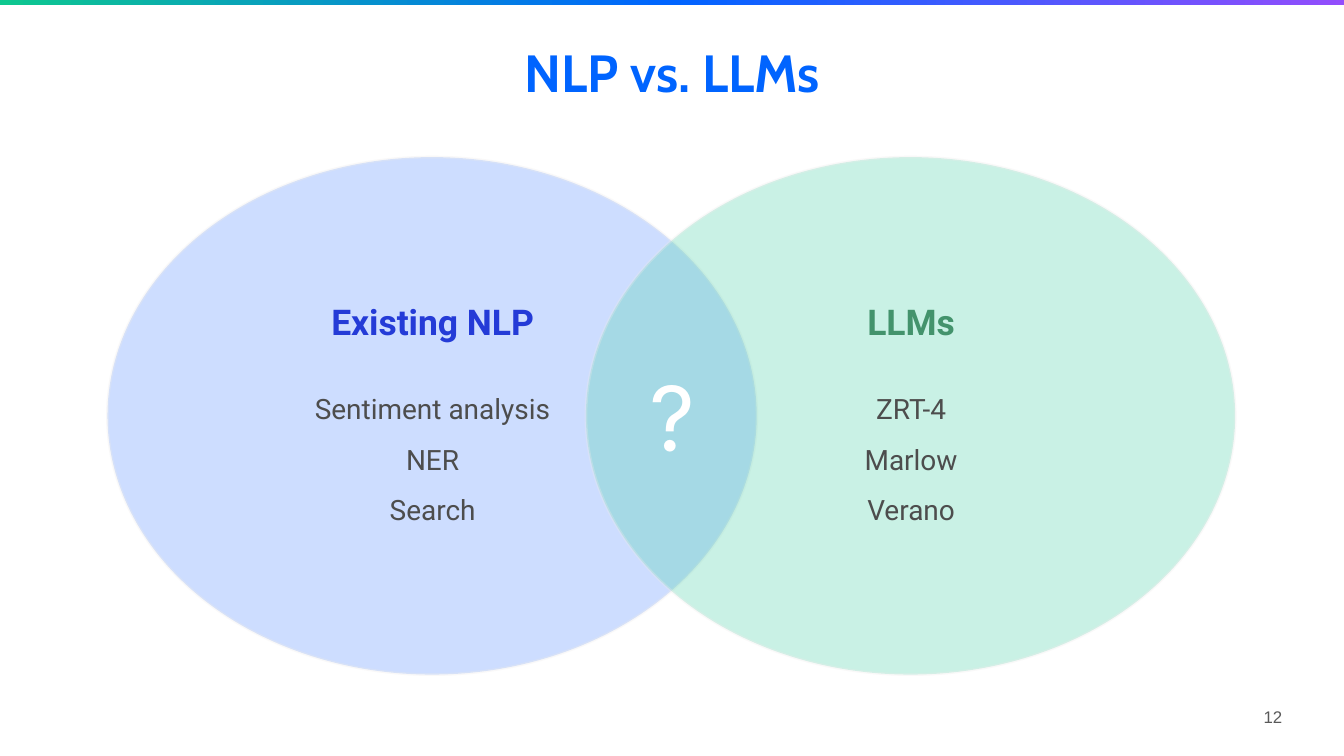
from copy import deepcopy

from pptx import Presentation
from pptx.dml.color import RGBColor
from pptx.enum.shapes import MSO_SHAPE
from pptx.enum.text import MSO_ANCHOR, MSO_AUTO_SIZE, PP_ALIGN
from pptx.oxml.ns import qn
from pptx.util import Pt
from lxml.etree import SubElement

COLORS = {
    "green": "0EC88F", "blue": "0064FF", "violet": "934DFC",
    "sky": "538CFF", "mint": "45D1A6", "edge": "EDEBEB",
    "navy": "243BD7", "leaf": "43936C", "body": "4D4D4D",
    "white": "FFFFFF", "gray": "595959",
}


def rgb(name):
    return RGBColor.from_string(COLORS[name])


def write(shape, text, size, font, color, bold=False, align=PP_ALIGN.CENTER,
          inset=0, spacing=None):
    """Fill a shape with text, one paragraph a line, and format it."""
    frame = shape.text_frame
    frame.text = text
    frame.word_wrap = True
    frame.auto_size = MSO_AUTO_SIZE.NONE
    frame.vertical_anchor = MSO_ANCHOR.TOP
    frame.margin_left = frame.margin_right = Pt(inset)
    frame.margin_top = frame.margin_bottom = Pt(inset)
    for para in frame.paragraphs:
        para.alignment = align
        if spacing:
            para.line_spacing = spacing
        for run in para.runs:
            run.font.size = Pt(size)
            run.font.name = font
            run.font.bold = bold
            run.font.color.rgb = rgb(color)


prs = Presentation()
prs.slide_width, prs.slide_height = Pt(720), Pt(405)
slide = prs.slides.add_slide(prs.slide_layouts[5])
shapes = slide.shapes

# Gradient bar along the top
bar = shapes.add_shape(MSO_SHAPE.RECTANGLE, Pt(-0.7), Pt(-0.7), Pt(721.4), Pt(3.6))
bar.shadow.inherit = False
bar.line.fill.background()
bar.fill.gradient()
bar.fill.gradient_angle = 0
stops = bar._element.spPr.find(".//" + qn("a:gsLst"))
stops.insert(1, deepcopy(stops[0]))
for i, (stop, name) in enumerate(zip(bar.fill.gradient_stops, ("green", "blue", "violet"))):
    stop.position = i / 2
    stop.color.rgb = rgb(name)

# Title
title = shapes.title
title.left, title.top, title.width, title.height = Pt(72), Pt(14.4), Pt(576), Pt(48.2)
write(title, "NLP vs. LLMs", 28, "Cabin", "blue", True, inset=7.2)

# Overlapping ellipses
for left, name in ((57.6, "sky"), (313.9, "mint")):
    oval = shapes.add_shape(MSO_SHAPE.OVAL, Pt(left), Pt(84.2), Pt(347.8), Pt(277.2))
    oval.shadow.inherit = False
    oval.fill.solid()
    oval.fill.fore_color.rgb = rgb(name)
    oval.line.color.rgb = rgb("edge")
    oval.line.width = Pt(1.5)
    for color in oval._element.spPr.iter(qn("a:srgbClr")):
        SubElement(color, qn("a:alpha")).set("val", "29000")

# Heading and list of each side, centred on its ellipse
sides = (
    (231.8, "Existing NLP", 114.5, "navy", "Sentiment analysis\nNER\nSearch", 129.6),
    (488.1, "LLMs", 51.1, "leaf", "ZRT-4\nMarlow\nVerano", 111.6),
)
for mid, head, wide, color, items, span in sides:
    box = shapes.add_textbox(Pt(mid - wide / 2), Pt(160.6), Pt(wide), Pt(31.7))
    write(box, head, 19, "Roboto", color, True)
    box = shapes.add_textbox(Pt(mid - span / 2), Pt(200.9), Pt(span), Pt(74.2))
    write(box, items, 15, "Roboto", "body", spacing=1.5)

# Question mark in the overlap
mark = shapes.add_textbox(Pt(313.9), Pt(193.7), Pt(92.2), Pt(74.2))
write(mark, "?", 48, "Inter", "white")

# Page number
page = shapes.add_textbox(Pt(650.9), Pt(371.5), Pt(43.2), Pt(31))
write(page, "12", 9, "Arial", "gray", align=PP_ALIGN.RIGHT, inset=7.2)

prs.save("out.pptx")
